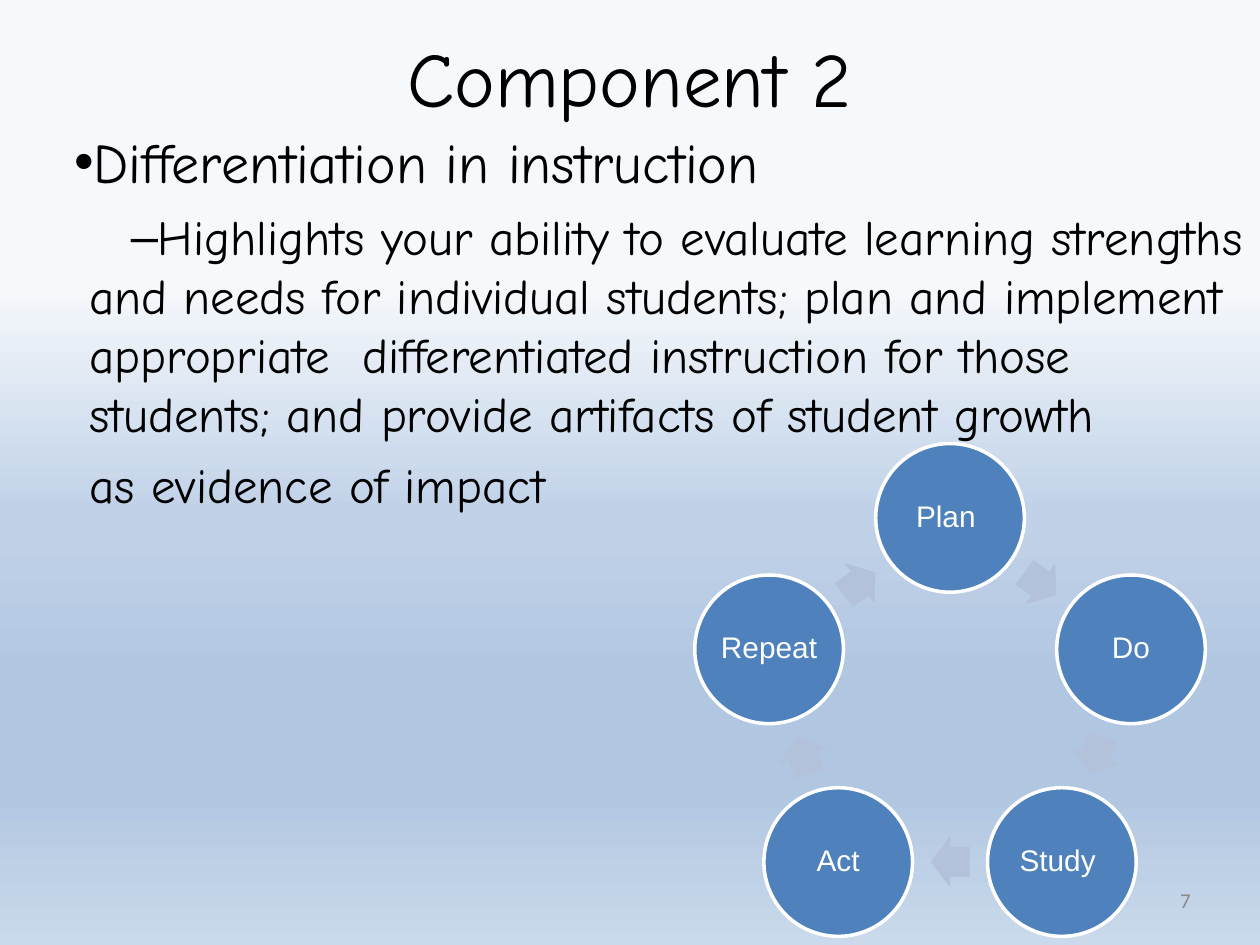
from math import cos, radians, sin

from lxml import etree
from pptx import Presentation
from pptx.dml.color import RGBColor
from pptx.enum.shapes import MSO_SHAPE as Shape
from pptx.enum.text import MSO_ANCHOR as Anchor, PP_ALIGN as Align
from pptx.oxml import parse_xml
from pptx.oxml.ns import nsdecls, qn
from pptx.util import Inches, Pt

COLORS = {"text": "000000", "number": "888888", "node": "4F81BD",
          "white": "FFFFFF", "arrow": "B3C1DB"}
BACKGROUND = [(30, "F6F9FC"), (54, "C1D2E8"), (74, "B0C6E1"), (83, "B0C6E1"), (100, "CAD9EB")]
# text, size, level, left margin, first-line indent, bullet
BODY = [
    ("Differentiation in instruction", 32, 0, 0.44, 0.38, "•"),
    ("Highlights your ability to evaluate learning strengths and needs for individual "
     "students; plan and implement appropriate  differentiated instruction for those "
     "students; and provide artifacts of student growth", 28, 1, 0.94, 0.33, "–"),
    ("as evidence of impact", 28, 1, 0.94, 0, None),
]
STEPS = ["Plan ", "Do", "Study ", "Act", "Repeat "]
CENTER_X, CENTER_Y = 7.54, 5.62
NODE_RADIUS, ARROW_RADIUS = 1.51, 1.22


def rgb(name):
    return RGBColor.from_string(COLORS[name])


def set_background(s):
    stops = "".join(f'<a:gs pos="{pos * 1000}"><a:srgbClr val="{color}"/></a:gs>'
                    for pos, color in BACKGROUND)
    s.background.fill.solid()
    bg_pr = s.background._cSld.bg.bgPr
    bg_pr.replace(bg_pr[0], parse_xml(
        f'<a:gradFill {nsdecls("a")} rotWithShape="1"><a:gsLst>{stops}</a:gsLst>'
        '<a:lin ang="5400000" scaled="0"/></a:gradFill>'))


def set_frame(tf, inset, anchor):
    tf.word_wrap = True
    tf.vertical_anchor = anchor
    tf.margin_left = tf.margin_right = tf.margin_top = tf.margin_bottom = Inches(inset)


def set_paragraph(p, text, size, font, color, align=Align.LEFT):
    p.text = text
    p.alignment = align
    p.font.size = Pt(size)
    p.font.name = font
    p.font.color.rgb = rgb(color)


def add_text_frame(s, x, y, w, h, inset=0.1, anchor=Anchor.MIDDLE):
    tf = s.shapes.add_textbox(Inches(x), Inches(y), Inches(w), Inches(h)).text_frame
    set_frame(tf, inset, anchor)
    return tf


def set_bullet(p, margin, indent, bullet):
    p_pr = p._p.get_or_add_pPr()
    p_pr.set("marL", str(Inches(margin)))
    p_pr.set("indent", str(Inches(indent)))
    if not bullet:
        etree.SubElement(p_pr, qn("a:buNone"))
        return
    color = etree.SubElement(p_pr, qn("a:buClr"))
    etree.SubElement(color, qn("a:srgbClr")).set("val", COLORS["text"])
    etree.SubElement(p_pr, qn("a:buFont")).set("typeface", "Arial")
    etree.SubElement(p_pr, qn("a:buChar")).set("char", bullet)


def add_body(s):
    tf = add_text_frame(s, -0.33, 0.91, 10.43, 4.95, anchor=Anchor.TOP)
    for i, (text, size, level, margin, indent, bullet) in enumerate(BODY):
        p = tf.add_paragraph() if i else tf.paragraphs[0]
        p.level = level
        p.space_before = Pt(7)
        set_bullet(p, margin, indent, bullet)
        set_paragraph(p, text, size, "Comic Neue", "text")


def add_on_circle(s, kind, angle, radius, w, h, color):
    """Add a shape centred on the cycle, its angle clockwise from the top."""
    x = CENTER_X + radius * sin(radians(angle)) - w / 2
    y = CENTER_Y - radius * cos(radians(angle)) - h / 2
    sp = s.shapes.add_shape(kind, Inches(x), Inches(y), Inches(w), Inches(h))
    sp.shadow.inherit = False
    sp.fill.solid()
    sp.fill.fore_color.rgb = rgb(color)
    return sp


def add_node(s, text, angle):
    sp = add_on_circle(s, Shape.OVAL, angle, NODE_RADIUS, 1.18, 1.18, "node")
    sp.line.color.rgb = rgb("white")
    sp.line.width = Pt(2)
    set_frame(sp.text_frame, 0.02, Anchor.MIDDLE)
    p = sp.text_frame.paragraphs[0]
    p.line_spacing = 0.9
    set_paragraph(p, text, 17, "Arial", "white", Align.CENTER)


def add_arrow(s, angle):
    sp = add_on_circle(s, Shape.RIGHT_ARROW, angle, ARROW_RADIUS, 0.31, 0.4, "arrow")
    sp.line.fill.background()
    sp.adjustments[0] = 0.6
    sp.adjustments[1] = 0.5
    sp.rotation = angle


def add_cycle(s):
    step = 360 / len(STEPS)
    for i, text in enumerate(STEPS):
        add_node(s, text, i * step)
        add_arrow(s, (i + 0.5) * step)


def main():
    prs = Presentation()
    prs.slide_width, prs.slide_height = Inches(10), Inches(7.5)
    s = prs.slides.add_slide(prs.slide_layouts[6])
    set_background(s)
    title = add_text_frame(s, 0.5, 0.3, 9, 0.61)
    set_paragraph(title.paragraphs[0], "Component 2", 44, "Comic Neue", "text", Align.CENTER)
    add_body(s)
    number = add_text_frame(s, 9.21, 7, 0.29, 0.29, inset=0.05)
    set_paragraph(number.paragraphs[0], "7", 12, "Calibri", "number", Align.RIGHT)
    add_cycle(s)
    prs.save("out.pptx")


if __name__ == "__main__":
    main()
